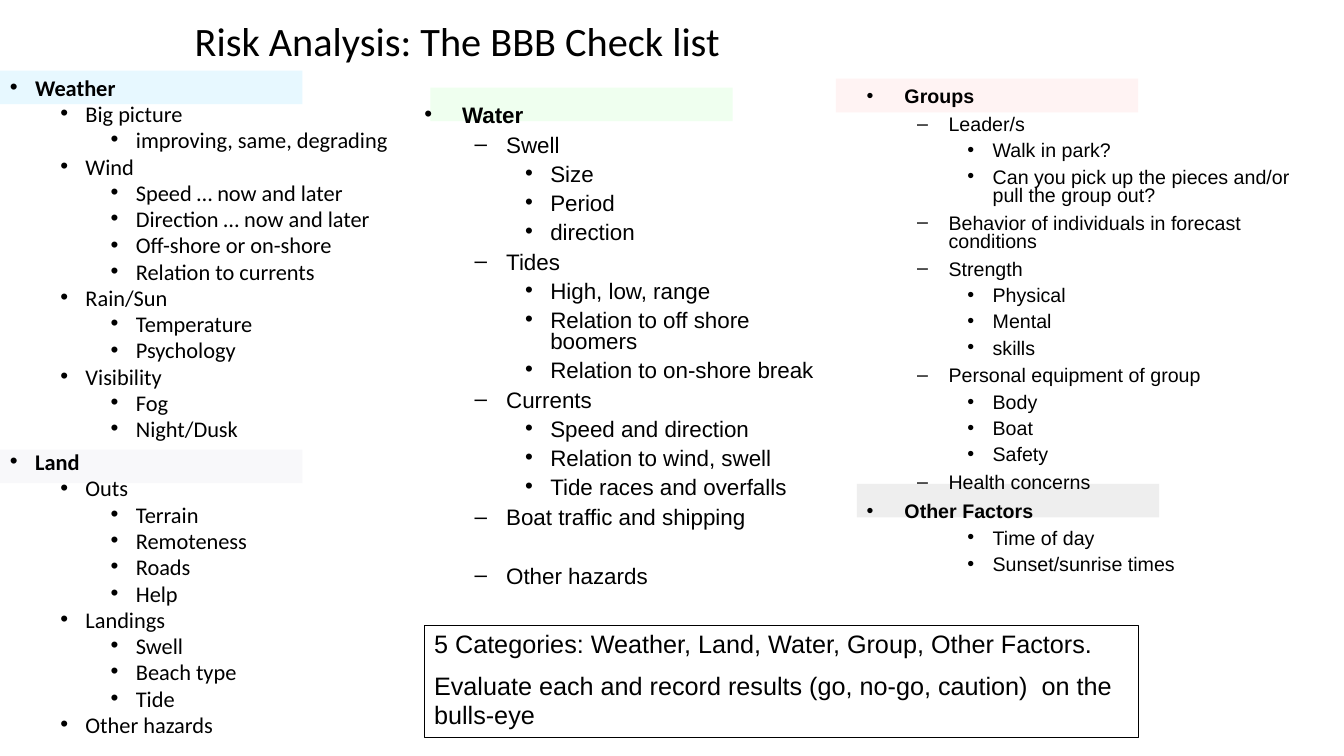
import pptx
import pptx.dml.color
import pptx.enum.shapes
import pptx.enum.text
import pptx.oxml.ns
import pptx.util
from lxml import etree

Pt = pptx.util.Pt
RGBColor = pptx.dml.color.RGBColor

BLACK = RGBColor(0x00, 0x00, 0x00)
WEATHER_BLUE = RGBColor(0xE7, 0xF8, 0xFF)
LAND_GREY = RGBColor(0xF8, 0xF8, 0xFA)
WATER_GREEN = RGBColor(0xEF, 0xFF, 0xEF)
GROUPS_PINK = RGBColor(0xFF, 0xF3, 0xF3)
OTHER_GREY = RGBColor(0xEE, 0xEE, 0xEE)

BAND_SIZE = (216, 24)
BANDS = [
    (612, 345.6, OTHER_GREY),
    (597, 56.2, GROUPS_PINK),
    (307.4, 62.6, WATER_GREEN),
    (0, 321.2, LAND_GREY),
    (0, 50.4, WEATHER_BLUE),
]

# Each outline line is a pair: level and text
WEATHER_AND_LAND = [
    (0, "Weather"),
    (1, "Big picture"), (2, "improving, same, degrading"),
    (1, "Wind"), (2, "Speed … now and later"), (2, "Direction … now and later"),
    (2, "Off-shore or on-shore"), (2, "Relation to currents"),
    (1, "Rain/Sun"), (2, "Temperature"), (2, "Psychology"),
    (1, "Visibility"), (2, "Fog"), (2, "Night/Dusk"),
    (0, "Land"),
    (1, "Outs"), (2, "Terrain"), (2, "Remoteness"), (2, "Roads"), (2, "Help"),
    (1, "Landings"), (2, "Swell"), (2, "Beach type"), (2, "Tide"),
    (1, "Other hazards"),
]
WATER = [
    (0, "Water"),
    (1, "Swell"), (2, "Size"), (2, "Period"), (2, "direction"),
    (1, "Tides"), (2, "High, low, range"), (2, "Relation to off shore boomers"),
    (2, "Relation to on-shore break"),
    (1, "Currents"), (2, "Speed and direction"), (2, "Relation to wind, swell"),
    (2, "Tide races and overfalls"),
    (1, "Boat traffic and shipping"),
    (1, "Other hazards"),
]
GROUPS = [
    (0, "Groups"),
    (1, "Leader/s"), (2, "Walk in park?"),
    (2, "Can you pick up the pieces and/or pull the group out?"),
    (1, "Behavior of individuals in forecast conditions"),
    (1, "Strength"), (2, "Physical"), (2, "Mental"), (2, "skills"),
    (1, "Personal equipment of group"), (2, "Body"), (2, "Boat"), (2, "Safety"),
    (1, "Health concerns"),
    (0, "Other Factors"), (2, "Time of day"), (2, "Sunset/sunrise times"),
]
SUMMARY = [
    "5 Categories: Weather, Land, Water, Group, Other Factors.",
    "Evaluate each and record results (go, no-go, caution)  on the bulls-eye",
]

# Per level: left margin, hanging indent, space before, bullet
ROUND_LEVELS = [(18, 18, 9.5, "•"), (54, 18, 4.75, "•"), (90, 18, 4.75, "•")]
DASH_LEVELS = [(27, 27, 7.6, "•"), (58.5, 22.5, 6.65, "–"), (90, 18, 5.7, "•")]


def apply_format(target, values):
    for name, value in values.items():
        setattr(target, name, value)


def write_para(para, text, font_values, para_values):
    apply_format(para, para_values)
    span = para.add_run()
    span.text = text
    apply_format(span.font, font_values)
    span.font.color.rgb = BLACK


def next_para(frame, index):
    return frame.add_paragraph() if index else frame.paragraphs[0]


def add_bullet(para, margin, hanging, mark):
    props = para._p.get_or_add_pPr()
    props.set("marL", str(Pt(margin)))
    props.set("indent", str(-Pt(hanging)))
    for tag, key, value in (("a:buFont", "typeface", "Arial"), ("a:buChar", "char", mark)):
        etree.SubElement(props, pptx.oxml.ns.qn(tag)).set(key, value)


def add_rectangle(page, box):
    shape = page.shapes.add_shape(
        pptx.enum.shapes.MSO_SHAPE.RECTANGLE, *[Pt(length) for length in box])
    shape.shadow.inherit = False
    return shape


def add_band(page, box, colour):
    band = add_rectangle(page, box)
    band.fill.solid()
    band.fill.fore_color.rgb = colour
    band.line.fill.background()


def add_title(page, box, text):
    frame = page.shapes.add_textbox(*[Pt(length) for length in box]).text_frame
    apply_format(frame, {"word_wrap": True,
                         "vertical_anchor": pptx.enum.text.MSO_ANCHOR.MIDDLE})
    write_para(frame.paragraphs[0], text, {"name": "Calibri", "size": Pt(28.8)},
               {"line_spacing": 0.9})


def add_outline(page, box, lines, levels, font, size, spacing):
    frame = page.shapes.add_textbox(*[Pt(length) for length in box]).text_frame
    frame.word_wrap = True
    for index, (level, text) in enumerate(lines):
        margin, hanging, before, mark = levels[level]
        para = next_para(frame, index)
        write_para(para, text,
                   {"name": font, "size": Pt(size), "bold": level == 0},
                   {"level": level, "line_spacing": spacing, "space_before": Pt(before)})
        add_bullet(para, margin, hanging, mark)
    return frame


def add_summary(page, box, lines):
    panel = add_rectangle(page, box)
    panel.fill.background()
    panel.line.color.rgb = BLACK
    panel.line.width = Pt(0.75)
    frame = panel.text_frame
    apply_format(frame, {"word_wrap": True,
                         "vertical_anchor": pptx.enum.text.MSO_ANCHOR.TOP})
    for index, text in enumerate(lines):
        write_para(next_para(frame, index), text, {"name": "Arial", "size": Pt(18)},
                   {"alignment": pptx.enum.text.PP_ALIGN.LEFT,
                    "line_spacing": 0.95, "space_before": Pt(9.5)})


def build_checklist(deck):
    page = deck.slides.add_slide(deck.slide_layouts[6])
    # Colour bands behind the category names
    for left, top, colour in BANDS:
        add_band(page, (left, top, *BAND_SIZE), colour)
    add_title(page, (132, 12, 684, 38), "Risk Analysis: The BBB Check list")
    # Three outline columns
    add_outline(page, (0, 54, 354, 486), WEATHER_AND_LAND, ROUND_LEVELS, "Calibri", 16, 0.73)
    water = add_outline(page, (296, 72.5, 298, 354), WATER, DASH_LEVELS, "Arial", 16, 0.78)
    water.paragraphs[-1].space_before = Pt(27)
    add_outline(page, (612, 60, 333, 366), GROUPS, DASH_LEVELS, "Arial", 14, 0.78)
    # Framed summary
    add_summary(page, (303, 447, 510, 79.5), SUMMARY)


def main():
    deck = pptx.Presentation()
    apply_format(deck, {"slide_width": Pt(960), "slide_height": Pt(540)})
    build_checklist(deck)
    deck.save("out.pptx")


if __name__ == "__main__":
    main()
